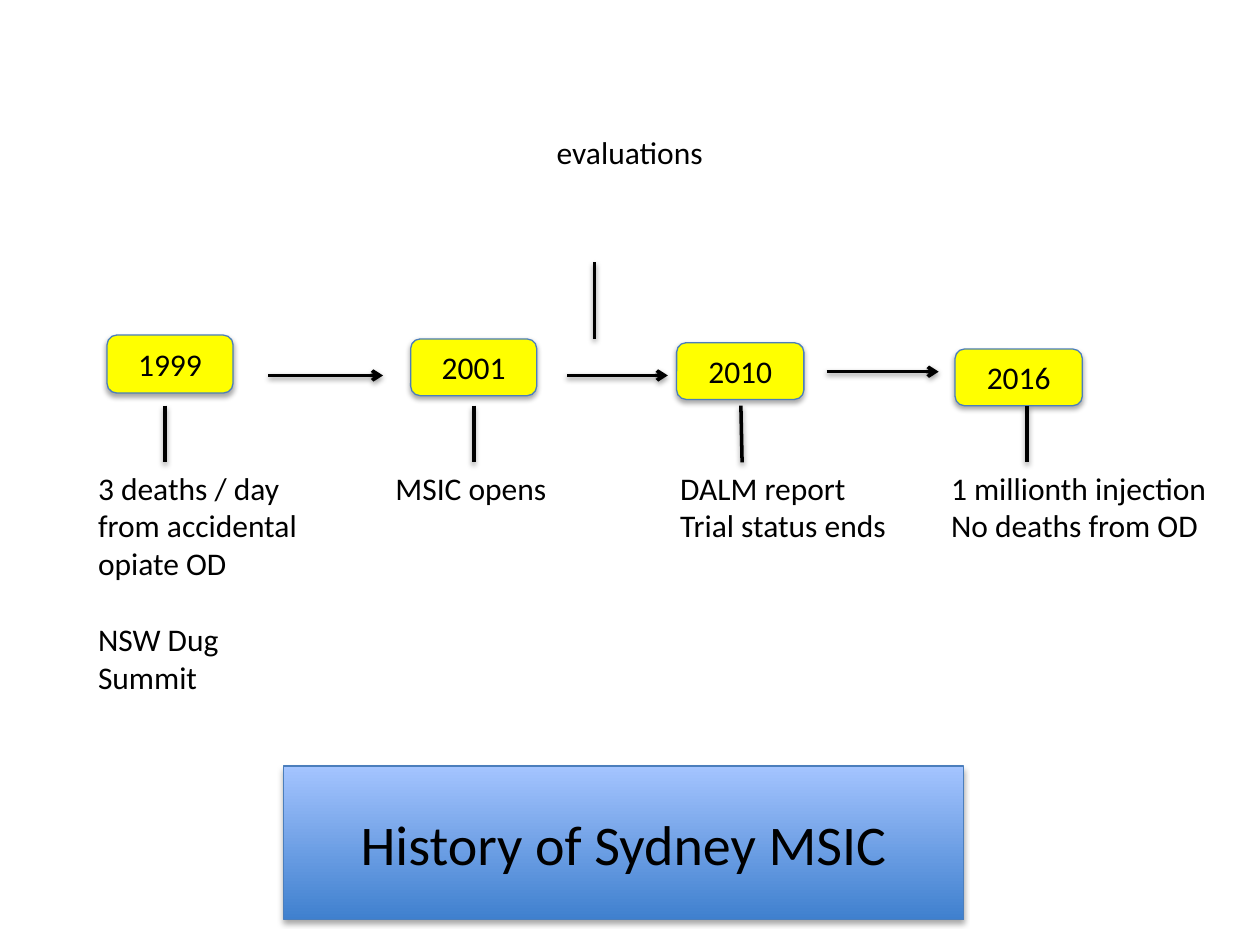
"""Build a timeline slide on the history of the Sydney MSIC."""
from lxml import etree
from pptx import Presentation
from pptx import util as u
from pptx.dml.color import RGBColor
from pptx.enum import shapes, text
from pptx.oxml import ns, xmlchemy

BLACK = RGBColor(0x00, 0x00, 0x00)
YELLOW = RGBColor(0xFF, 0xFF, 0x00)
EDGE = RGBColor(0x4B, 0x7E, 0xBC)
DEEP = RGBColor(0x3F, 0x80, 0xCE)
PALE = RGBColor(0xA4, 0xC4, 0xFF)
BODY = {"name": "Calibri", "size": u.Pt(18)}
HEADING = {"name": "Calibri", "size": u.Pt(32), "bold": False}


class Timeline:
    """Hold the slide and draw each kind of element in one style."""

    def __init__(self, s):
        self.s = s

    def add(self, parent, tag, **attrs):
        """Append a drawing element with the given attributes."""
        return etree.SubElement(parent, ns.qn(tag), {k: str(v) for k, v in attrs.items()})

    def shadow(self, sp, alpha, dist):
        """Cast a soft shadow straight down."""
        effects = self.add(sp._element.spPr, "a:effectLst")
        outer = self.add(effects, "a:outerShdw", blurRad=u.Pt(3.1), dist=u.Pt(dist),
                         dir=5400000, rotWithShape=0)
        color = self.add(outer, "a:srgbClr", val="000000")
        self.add(color, "a:alpha", val=alpha * 1000)

    def set_text(self, sp, lines, style, align, **frame):
        """Fill a shape with one paragraph per line."""
        tf = sp.text_frame
        for key, value in {"word_wrap": True, **frame}.items():
            setattr(tf, key, value)
        for i, line in enumerate(lines):
            p = tf.add_paragraph() if i else tf.paragraphs[0]
            p.alignment = align
            r = p.add_run()
            r.text = line
            r.font.color.rgb = BLACK
            for key, value in style.items():
                setattr(r.font, key, value)

    def panel(self, sp, label, style):
        """Finish a filled panel with its edge, shadow and centred label."""
        sp.line.color.rgb = EDGE
        sp.line.width = u.Pt(0.75)
        self.shadow(sp, 35, 1.8)
        self.set_text(sp, [label], style, text.PP_ALIGN.CENTER,
                      vertical_anchor=text.MSO_ANCHOR.MIDDLE, auto_size=text.MSO_AUTO_SIZE.NONE)

    def title(self, label, x, y, w, h):
        """Turn the title placeholder into a rounded gradient panel."""
        sp = self.s.shapes.title
        sp.left, sp.top, sp.width, sp.height = map(u.Inches, (x, y, w, h))
        geom = xmlchemy.OxmlElement("a:prstGeom")
        geom.set("prst", "roundRect")
        self.add(geom, "a:avLst")
        sp._element.spPr.insert(1, geom)
        sp.fill.gradient()
        sp.fill.gradient_angle = 90
        for stop, color, position in zip(sp.fill.gradient_stops, (DEEP, PALE), (0, 1)):
            stop.color.rgb = color
            stop.position = position
        self.panel(sp, label, HEADING)

    def year(self, label, x, y, w, h):
        """Add a yellow year box."""
        sp = self.s.shapes.add_shape(shapes.MSO_SHAPE.ROUNDED_RECTANGLE,
                                     *map(u.Inches, (x, y, w, h)))
        sp.fill.solid()
        sp.fill.fore_color.rgb = YELLOW
        self.panel(sp, label, BODY)

    def note(self, lines, x, y, w, h):
        """Add a text box that grows with its text."""
        sp = self.s.shapes.add_textbox(*map(u.Inches, (x, y, w, h)))
        self.set_text(sp, lines, BODY, text.PP_ALIGN.LEFT,
                      auto_size=text.MSO_AUTO_SIZE.SHAPE_TO_FIT_TEXT)

    def line(self, x1, y1, x2, y2, arrow=False):
        """Add a straight line, with an arrowhead at its end if asked."""
        c = self.s.shapes.add_connector(shapes.MSO_CONNECTOR.STRAIGHT,
                                        *map(u.Inches, (x1, y1, x2, y2)))
        c.line.color.rgb = BLACK
        c.line.width = u.Pt(2)
        if arrow:
            self.add(c.line._get_or_add_ln(), "a:tailEnd", type="arrow")
        self.shadow(c, 38, 1.6)


def main():
    prs = Presentation()
    prs.slide_width, prs.slide_height = u.Inches(10), u.Inches(7.5)
    t = Timeline(prs.slides.add_slide(prs.slide_layouts[5]))
    t.title("History of Sydney MSIC", 2.25, 6.08, 5.4, 1.22)

    years = [("1999", 0.85, 2.66, 1, 0.46), ("2001", 3.26, 2.69, 1, 0.45),
             ("2010", 5.37, 2.72, 1.01, 0.45), ("2016", 7.58, 2.77, 1.01, 0.45)]
    for year in years:
        t.year(*year)

    for x1, x2, y in [(2.13, 3.04, 2.98), (4.5, 5.3, 2.98), (6.56, 7.45, 2.95)]:
        t.line(x1, y, x2, y, arrow=True)

    stem_top, note_top = 3.22, 3.67
    for x1, x2 in [(1.31, 1.31), (3.76, 3.76), (5.88, 5.89), (8.15, 8.15)]:
        t.line(x1, stem_top, x2, note_top)
    t.line(4.72, 2.69, 4.72, 2.08)

    notes = [(["3 deaths / day from accidental opiate OD"], 0.68, note_top, 2.17, 1.01),
             (["NSW Dug Summit"], 0.68, 4.87, 1.74, 0.71),
             (["MSIC opens"], 3.04, note_top, 1.69, 0.4),
             (["evaluations"], 4.32, 1.01, 2.15, 0.4),
             (["DALM report", "Trial status ends"], 5.3, note_top, 2.85, 0.71),
             (["1 millionth injection", "No deaths from OD"], 7.45, note_top, 2.5, 0.71)]
    for note in notes:
        t.note(*note)

    prs.save("out.pptx")


if __name__ == "__main__":
    main()
